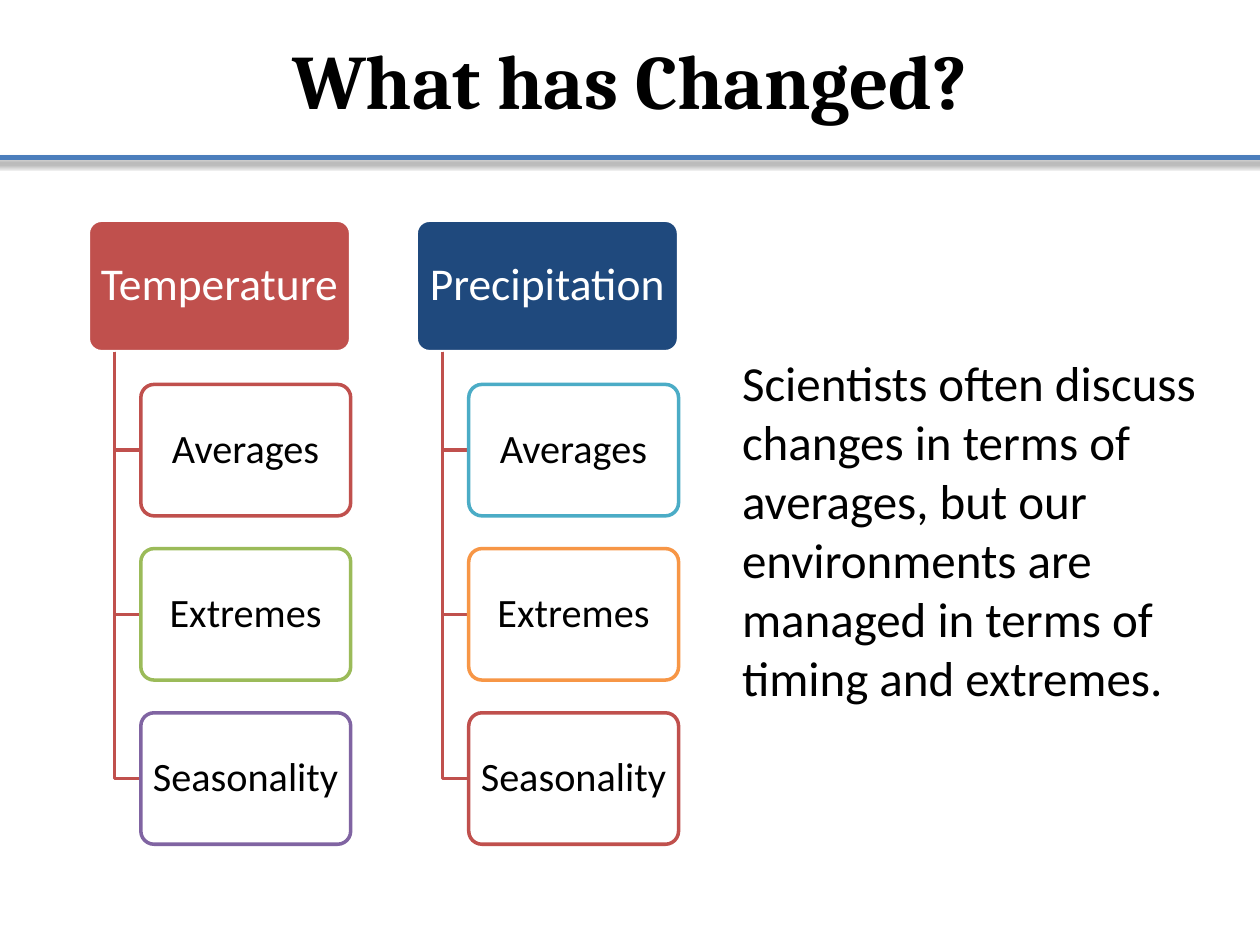
from lxml import etree
from pptx import Presentation
from pptx import util as u
from pptx.dml.color import RGBColor
from pptx.enum import shapes, text
from pptx.oxml import ns

COLORS = {
    "black": "000000",
    "white": "FFFFFF",
    "rule": "4B7EBC",
    "red": "C0504D",
    "navy": "1F497D",
    "green": "9BBB59",
    "purple": "8064A2",
    "teal": "4BACC6",
    "orange": "F79646",
}
TOPICS = ["Averages", "Extremes", "Seasonality"]
COLUMNS = [
    ("Temperature", "red", ["red", "green", "purple"]),
    ("Precipitation", "navy", ["teal", "orange", "red"]),
]
COLUMN_LEFT, COLUMN_PITCH = 1.78, 6.61
HEADER_TOP, ROW_PITCH = 4.44, 3.31
HEADER_WIDTH, BOX_WIDTH, BOX_HEIGHT = 5.29, 4.23, 2.65
STEM_OFFSET, BOX_OFFSET = 0.53, 1.06


def rgb(name):
    return RGBColor.from_string(COLORS[name])


def effect_list(blur=None, distance=None, alpha=40):
    """Return an effect list: empty, or with one shadow falling at 45 degrees."""
    effects = etree.Element(ns.qn("a:effectLst"))
    if blur is not None:
        shadow = etree.SubElement(
            effects, ns.qn("a:outerShdw"), blurRad=str(u.Pt(blur)),
            dist=str(u.Pt(distance)), dir="2700000", algn="tl", rotWithShape="0")
        color = etree.SubElement(shadow, ns.qn("a:srgbClr"), val=COLORS["black"])
        etree.SubElement(color, ns.qn("a:alpha"), val=str(alpha * 1000))
    return effects


def add_run(paragraph, words, size, color, font="Calibri", bold=False):
    run = paragraph.add_run()
    run.text = words
    run.font.size = u.Pt(size)
    run.font.bold = bold
    run.font.color.rgb = rgb(color)
    run.font.name = font
    return run


def add_text_box(slide, left, top, width, height):
    shape = slide.shapes.add_textbox(u.Cm(left), u.Cm(top), u.Cm(width), u.Cm(height))
    shape.text_frame.word_wrap = True
    return shape.text_frame


def add_title(slide, words):
    frame = add_text_box(slide, 1.27, 0, 22.86, 3.18)
    frame.vertical_anchor = text.MSO_ANCHOR.MIDDLE
    paragraph = frame.paragraphs[0]
    paragraph.alignment = text.PP_ALIGN.CENTER
    run = add_run(paragraph, words, 44, "black", "Cambria", True)
    fill = run.font._element.find(ns.qn("a:solidFill"))
    fill.addnext(effect_list(4, 3))


def add_rule(slide):
    rule = slide.shapes.add_connector(
        shapes.MSO_CONNECTOR.STRAIGHT, u.Cm(-1.07), u.Cm(3.18), u.Cm(25.6), u.Cm(3.18))
    rule.line.color.rgb = rgb("rule")
    rule.line.width = u.Pt(3)
    rule._element.spPr.append(effect_list(4, 3, 45))


def add_box(slide, words, left, top, width, size, fill, line, font_color):
    shape = slide.shapes.add_shape(
        shapes.MSO_SHAPE.ROUNDED_RECTANGLE,
        u.Cm(left), u.Cm(top), u.Cm(width), u.Cm(BOX_HEIGHT))
    shape.adjustments[0] = 0.1
    shape.shadow.inherit = False
    shape.fill.solid()
    shape.fill.fore_color.rgb = rgb(fill)
    shape.line.color.rgb = rgb(line)
    shape.line.width = u.Pt(2)
    frame = shape.text_frame
    frame.word_wrap = True
    frame.vertical_anchor = text.MSO_ANCHOR.MIDDLE
    frame.margin_left = frame.margin_right = u.Cm(0.12)
    frame.margin_top = frame.margin_bottom = u.Cm(0.1)
    paragraph = frame.paragraphs[0]
    paragraph.alignment = text.PP_ALIGN.CENTER
    paragraph.line_spacing = 0.9
    add_run(paragraph, words, size, font_color)
    return shape


def add_elbow(slide, left, top, right, bottom):
    """Draw a line down from the header, then right to a topic box."""
    builder = slide.shapes.build_freeform(u.Cm(left), u.Cm(top))
    builder.add_line_segments(
        [(u.Cm(left), u.Cm(bottom)), (u.Cm(right), u.Cm(bottom))], close=False)
    shape = builder.convert_to_shape()
    shape.shadow.inherit = False
    shape.fill.background()
    shape.line.color.rgb = rgb("red")
    shape.line.width = u.Pt(2)


def add_column(slide, left, heading, color, outlines):
    add_box(slide, heading, left, HEADER_TOP, HEADER_WIDTH, 26, color, "white", "white")
    for row, (topic, outline) in enumerate(zip(TOPICS, outlines), start=1):
        top = HEADER_TOP + row * ROW_PITCH
        add_elbow(slide, left + STEM_OFFSET, HEADER_TOP + BOX_HEIGHT,
                  left + BOX_OFFSET, top + BOX_HEIGHT / 2)
        box = add_box(slide, topic, left + BOX_OFFSET, top, BOX_WIDTH, 23,
                      "white", outline, "black")
        color_element = box._element.spPr.find(ns.qn("a:solidFill"))[0]
        etree.SubElement(color_element, ns.qn("a:alpha"), val="90000")


def main():
    presentation = Presentation()
    presentation.slide_width = u.Cm(25.4)
    presentation.slide_height = u.Cm(19.05)
    slide = presentation.slides.add_slide(presentation.slide_layouts[6])
    add_rule(slide)
    add_title(slide, "What has Changed?")
    for index, column in enumerate(COLUMNS):
        add_column(slide, COLUMN_LEFT + index * COLUMN_PITCH, *column)
    frame = add_text_box(slide, 14.71, 6.99, 10.16, 7.44)
    add_run(frame.paragraphs[0],
            "Scientists often discuss changes in terms of averages, but our "
            "environments are managed in terms of timing and extremes.", 28, "black")
    presentation.save("out.pptx")


if __name__ == "__main__":
    main()
